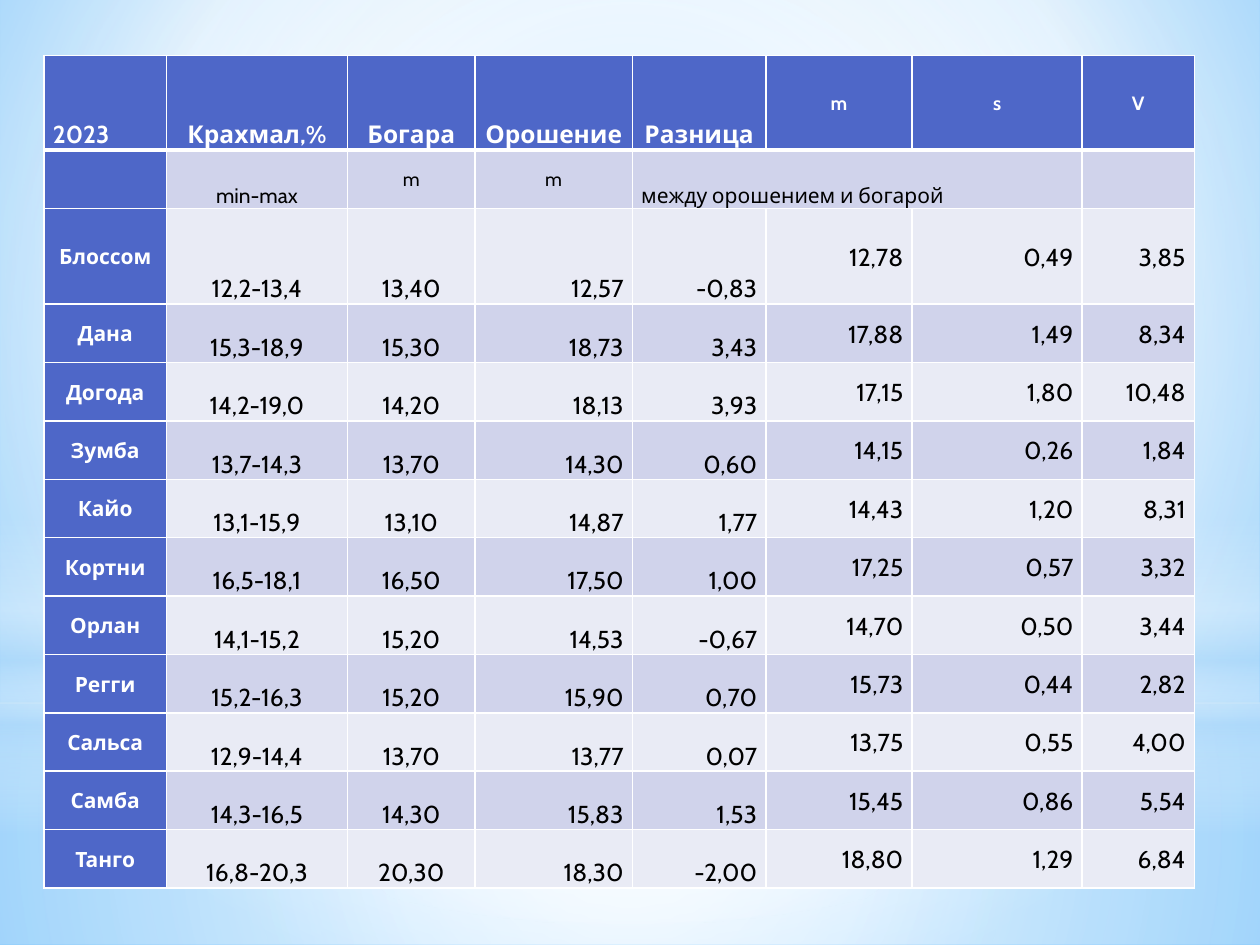
"""Build a one-slide table of starch content by potato variety, 2023."""
from lxml.etree import SubElement
from pptx import Presentation
from pptx.dml.color import RGBColor
from pptx.enum.shapes import MSO_SHAPE as SHAPE
from pptx.enum.text import MSO_ANCHOR as ANCHOR, PP_ALIGN as ALIGN
from pptx.oxml.ns import qn
from pptx.util import Inches, Pt

COLORS = {"white": "FFFFFF", "black": "000000", "header": "4E67C8", "dark_band": "D0D3EB",
          "light_band": "E9EBF5", "haze": "B4DCFA", "sky": "9ED5FF", "deep_sky": "5BB9FF"}
FONT = "Cabin"
HEADERS = ["2023", "Крахмал,%", "Богара", "Орошение", "Разница", "m", "s", "V"]
SUBHEADERS = ["", "min-max", "m", "m", "между орошением и богарой", "", "", ""]
VARIETIES = [
    ["Блоссом", "12,2-13,4", "13,40", "12,57", "-0,83", "12,78", "0,49", "3,85"],
    ["Дана", "15,3-18,9", "15,30", "18,73", "3,43", "17,88", "1,49", "8,34"],
    ["Догода", "14,2-19,0", "14,20", "18,13", "3,93", "17,15", "1,80", "10,48"],
    ["Зумба", "13,7-14,3", "13,70", "14,30", "0,60", "14,15", "0,26", "1,84"],
    ["Кайо", "13,1-15,9", "13,10", "14,87", "1,77", "14,43", "1,20", "8,31"],
    ["Кортни", "16,5-18,1", "16,50", "17,50", "1,00", "17,25", "0,57", "3,32"],
    ["Орлан", "14,1-15,2", "15,20", "14,53", "-0,67", "14,70", "0,50", "3,44"],
    ["Регги", "15,2-16,3", "15,20", "15,90", "0,70", "15,73", "0,44", "2,82"],
    ["Сальса", "12,9-14,4", "13,70", "13,77", "0,07", "13,75", "0,55", "4,00"],
    ["Самба", "14,3-16,5", "14,30", "15,83", "1,53", "15,45", "0,86", "5,54"],
    ["Танго", "16,8-20,3", "20,30", "18,30", "-2,00", "18,80", "1,29", "6,84"],
]
ROWS = [HEADERS, SUBHEADERS, *VARIETIES]

LEFT, TOP, HEIGHT = 0.35, 0.44, 6.61
COLUMN_WIDTHS = [0.97, 1.44, 1.01, 1.25, 1.06, 1.16, 1.35, 0.89]
TALL_ROWS = {0: 0.75, 2: 0.76}
ROW_HEIGHT = (HEIGHT - sum(TALL_ROWS.values())) / (len(ROWS) - len(TALL_ROWS))

CENTRE = (50, 50, 50, 50)
SKY = [(0, "sky", 100), (60, "white", 100), (100, "deep_sky", 100)]
HAZE_LAYERS = [
    (SHAPE.RECTANGLE, 5.58, 1.92, CENTRE, [(0, "white", 91), (37, "white", 76), (100, "haze", 79)]),
    (SHAPE.RECTANGLE, 0, 5.58, CENTRE, [(0, "white", 89), (48, "white", 62), (100, "haze", 79)]),
    (SHAPE.RECTANGLE, 4.12, 2.5, None, [(0, "white", 0), (29, "white", 30), (45, "haze", 40),
                                        (55, "white", 26), (65, "haze", 60), (100, "white", 0)]),
    (SHAPE.OVAL, 1.75, 5.58, CENTRE, [(0, "white", 100), (56, "white", 0)]),
]


def rgb(name):
    return RGBColor.from_string(COLORS[name])


def add(parent, tag, **attributes):
    return SubElement(parent, qn(tag), {key: str(value) for key, value in attributes.items()})


def set_gradient(fill, element, stops, focus):
    fill.gradient()
    gradient = element.xpath(".//a:gradFill")[0]
    for child in list(gradient):
        gradient.remove(child)
    stop_list = add(gradient, "a:gsLst")
    for position, color, opacity in stops:
        stop = add(stop_list, "a:gs", pos=position * 1000)
        add(add(stop, "a:srgbClr", val=COLORS[color]), "a:alpha", val=opacity * 1000)
    if focus:
        sides = {side: share * 1000 for side, share in zip("ltrb", focus)}
        add(add(gradient, "a:path", path="circle"), "a:fillToRect", **sides)
    else:
        add(gradient, "a:lin", ang=90 * 60000, scaled=0)


def add_backdrop(slide, width):
    set_gradient(slide.background.fill, slide.element, SKY, (20, 10, 20, 60))
    for kind, top, height, focus, stops in HAZE_LAYERS:
        shape = slide.shapes.add_shape(kind, 0, Inches(top), width, Inches(height))
        shape.shadow.inherit = False
        shape.line.fill.background()
        set_gradient(shape.fill, shape.element, stops, focus)


def set_borders(cell, row):
    properties = cell._tc.get_or_add_tcPr()
    thick_side = {0: "B", 1: "T"}.get(row)
    for side in "LRTB":
        line = add(properties, f"a:ln{side}", w=Pt(3 if side == thick_side else 1))
        add(add(line, "a:solidFill"), "a:srgbClr", val=COLORS["white"])


def cell_style(row, column):
    """Return size, alignment and anchor for a cell."""
    if row == 0:
        size, align = (14 if column < 5 else 11), (ALIGN.CENTER if column else ALIGN.LEFT)
    elif row == 1:
        size = 11 if column in (2, 3) else 12
        align = ALIGN.LEFT if column == 4 else ALIGN.CENTER
    else:
        size, align = (14 if column else 12), (ALIGN.CENTER if column < 3 else ALIGN.RIGHT)
    middle = column > 4 or (column == 0 and row > 0) or (row == 1 and column in (2, 3))
    return size, align, ANCHOR.MIDDLE if middle else ANCHOR.BOTTOM


def format_cell(cell, row, column, text):
    size, align, anchor = cell_style(row, column)
    is_header = row == 0 or column == 0
    set_borders(cell, row)
    cell.fill.solid()
    band = "dark_band" if row % 2 else "light_band"
    cell.fill.fore_color.rgb = rgb("header" if is_header else band)
    cell.margin_left = cell.margin_right = Inches(0.07)
    cell.margin_top = cell.margin_bottom = 0
    cell.vertical_anchor = anchor
    cell.text = text
    paragraph = cell.text_frame.paragraphs[0]
    paragraph.alignment = align
    paragraph.line_spacing = 1.07
    font = paragraph.font
    font.name, font.size, font.bold = FONT, Pt(size), is_header
    font.color.rgb = rgb("white" if is_header else "black")


def add_starch_table(slide):
    frame = slide.shapes.add_table(len(ROWS), len(HEADERS), Inches(LEFT), Inches(TOP),
                                   Inches(sum(COLUMN_WIDTHS)), Inches(HEIGHT))
    table = frame.table
    for column, width in zip(table.columns, COLUMN_WIDTHS):
        column.width = Inches(width)
    for index, row in enumerate(table.rows):
        row.height = Inches(TALL_ROWS.get(index, ROW_HEIGHT))
    for row, texts in enumerate(ROWS):
        for column, text in enumerate(texts):
            format_cell(table.cell(row, column), row, column, text)
    table.cell(1, 4).merge(table.cell(1, 6))


def main():
    presentation = Presentation()
    presentation.slide_width, presentation.slide_height = Inches(10), Inches(7.5)
    slide = presentation.slides.add_slide(presentation.slide_layouts[6])
    add_backdrop(slide, presentation.slide_width)
    add_starch_table(slide)
    presentation.save("out.pptx")


if __name__ == "__main__":
    main()
